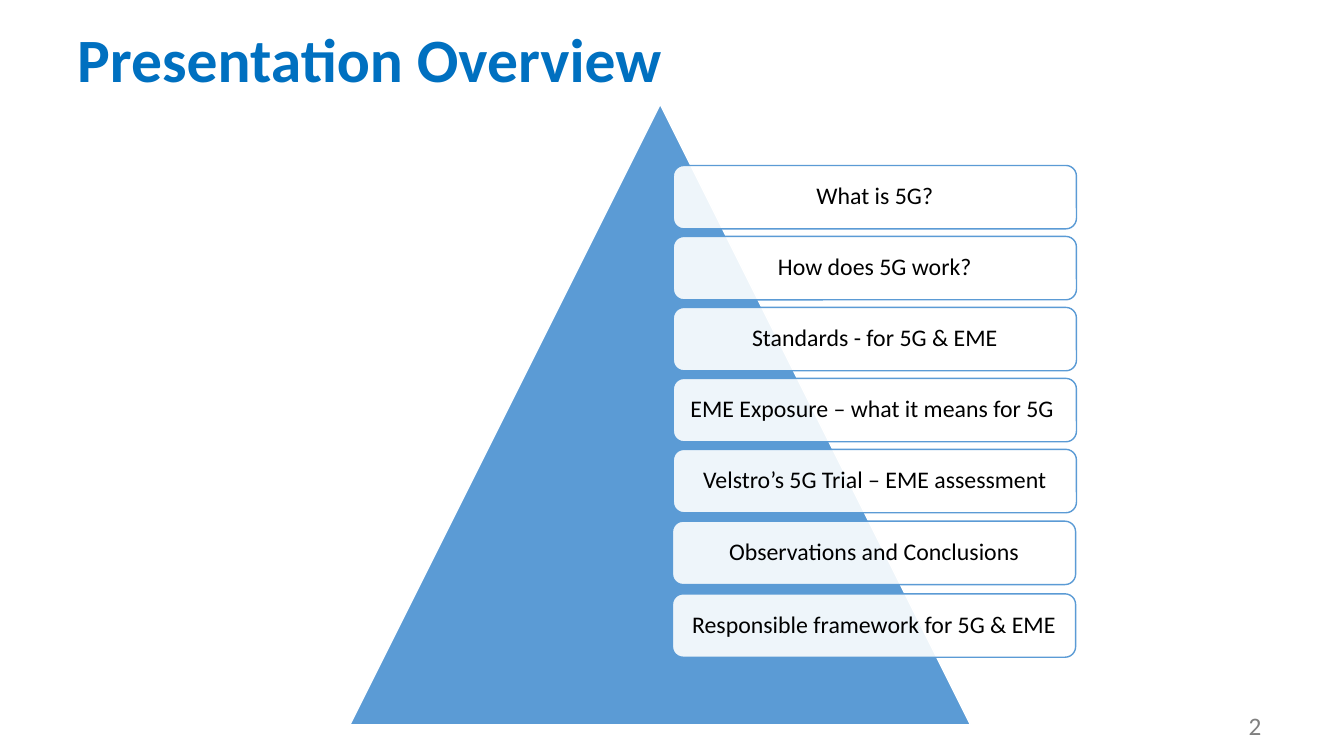
"""Build the presentation overview slide: a pyramid with seven topic cards."""
import pptx
import pptx.util
import pptx.dml.color
import pptx.enum.shapes
import pptx.enum.text
import pptx.oxml

TITLE = "Presentation Overview"
TOPICS = [
    "What is 5G?",
    "How does 5G work?",
    "Standards - for 5G & EME",
    "EME Exposure – what it means for 5G ",
    "Velstro’s 5G Trial – EME assessment",
    "Observations and Conclusions",
    "Responsible framework for 5G & EME",
]
NUMBER = "2"

THEME = {
    "font": "Calibri",
    "title": "0070C0", "blue": "5B9BD5", "white": "FFFFFF",
    "black": "000000", "grey": "808080",
    "big": 44, "body": 17, "small": 18, "line": 1,
}

COLS, ROWS = 32, 18
HEAD = (1.6, 0, 28.8, 3)
PEAK = (8.33, 2.48, 14.78, 14.78)
CARD = (16.03, 3.94, 9.6, 1.51)
PITCH = 1.69
NUDGE = {5: (-0.02, 0.02), 6: (-0.02, 0.06)}
FOOT = (28.61, 16.8, 2.54, 0.96)
PAD = 0.17

KIND = pptx.enum.shapes.MSO_SHAPE
ALIGN = pptx.enum.text.PP_ALIGN
ANCHOR = pptx.enum.text.MSO_ANCHOR

deck = pptx.Presentation()
deck.slide_width = pptx.util.Inches(13.33)
deck.slide_height = pptx.util.Inches(7.5)
slide = deck.slides.add_slide(deck.slide_layouts[6])


def color(name):
    return pptx.dml.color.RGBColor.from_string(THEME[name])


def place(box):
    col, row = deck.slide_width / COLS, deck.slide_height / ROWS
    return [round(v * unit) for v, unit in zip(box, (col, row, col, row))]


def write(shape, text, size="body", ink="black", bold=False,
          align=ALIGN.CENTER, anchor=ANCHOR.MIDDLE, pad=None, lead=None):
    frame = shape.text_frame
    frame.word_wrap = True
    frame.vertical_anchor = anchor
    if pad is not None:
        gap = round(pad * deck.slide_height / ROWS)
        frame.margin_left = frame.margin_right = gap
        frame.margin_top = frame.margin_bottom = gap
    para = frame.paragraphs[0]
    para.alignment = align
    if lead:
        para.line_spacing = lead
    run = para.add_run()
    run.text = text
    run.font.name = THEME["font"]
    run.font.size = pptx.util.Pt(THEME[size])
    run.font.bold = bold
    run.font.color.rgb = color(ink)


def draw(kind, box, fill, line, alpha=None):
    shape = slide.shapes.add_shape(kind, *place(box))
    shape.shadow.inherit = False
    shape.fill.solid()
    shape.fill.fore_color.rgb = color(fill)
    shape.line.color.rgb = color(line)
    shape.line.width = pptx.util.Pt(THEME["line"])
    if alpha:
        tag = pptx.oxml.ns.qn("a:alpha")
        tint = shape.fill._xPr.find(".//" + pptx.oxml.ns.qn("a:srgbClr"))
        tint.makeelement(tag)
        mark = tint.makeelement(tag, {"val": str(alpha * 1000)})
        tint.append(mark)
    return shape


write(slide.shapes.add_textbox(*place(HEAD)), TITLE, size="big", ink="title",
      bold=True, align=ALIGN.LEFT, lead=0.9)

draw(KIND.ISOSCELES_TRIANGLE, PEAK, "blue", "white")

left, top, wide, high = CARD
for i, topic in enumerate(TOPICS):
    dx, dy = NUDGE.get(i, (0, 0))
    box = (left + dx, top + i * PITCH + dy, wide, high)
    card = draw(KIND.ROUNDED_RECTANGLE, box, "white", "blue", alpha=90)
    write(card, topic, pad=PAD, lead=0.9)

write(slide.shapes.add_textbox(*place(FOOT)), NUMBER, size="small",
      ink="grey", anchor=ANCHOR.TOP)

deck.save("out.pptx")
